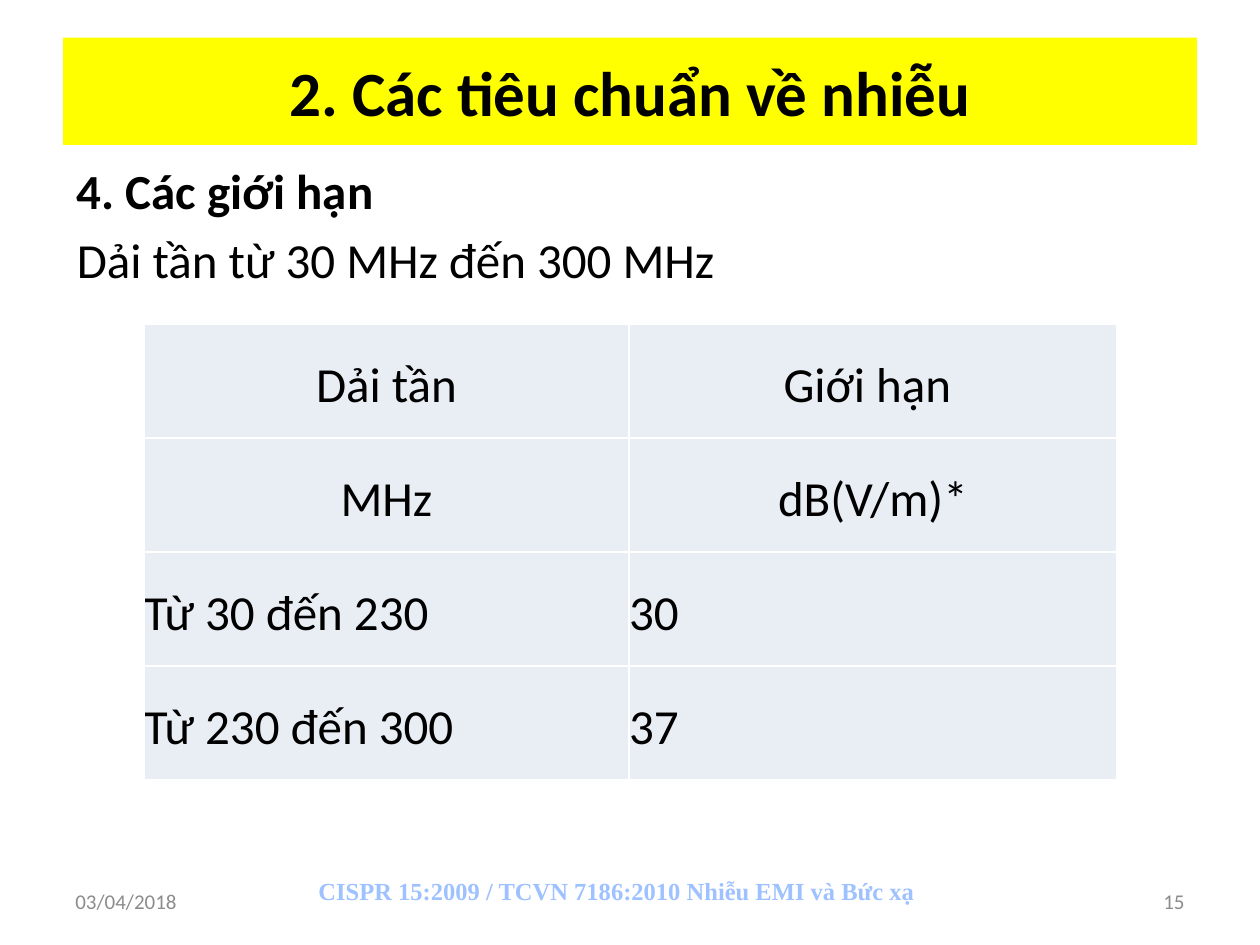
import pptx
import pptx.util
import pptx.dml.color
import pptx.enum.text
from lxml import etree
from pptx.dml.color import RGBColor
from pptx.enum.text import MSO_ANCHOR, PP_ALIGN
from pptx.util import Cm, Pt

BLACK = RGBColor(0x00, 0x00, 0x00)
YELLOW = RGBColor(0xFF, 0xFF, 0x00)
PALE = RGBColor(0xE9, 0xED, 0xF4)
GREY = RGBColor(0x8C, 0x8C, 0x8C)
BLUE = RGBColor(0x9E, 0xC1, 0xFF)
BORDER = "FFFFFF"

TITLE = "2. Các tiêu chuẩn về nhiễu"
BODY = [("4. Các giới hạn", True), ("Dải tần từ 30 MHz đến 300 MHz", False)]
LIMITS = [
    ("Dải tần", "Giới hạn "),
    ("MHz", "dB(V/m)*"),
    ("Từ 30 đến 230", "30"),
    ("Từ 230 đến 300", "37"),
]
HEADER_ROWS = 2
COL_WIDTHS = (9.78, 9.83)
ROW_HEIGHT = 2.3
SOURCE = "CISPR 15:2009 / TCVN 7186:2010 Nhiễu EMI và Bức xạ"
DATE, PAGE = "03/04/2018", "15"


def style(p, size, color=BLACK, bold=False, font="Calibri", align=PP_ALIGN.LEFT):
    p.alignment = align
    for r in p.runs:
        r.font.name = font
        r.font.size = Pt(size)
        r.font.bold = bold
        r.font.color.rgb = color


def add_text(s, box, text, anchor=MSO_ANCHOR.TOP):
    tf = s.shapes.add_textbox(*map(Cm, box)).text_frame
    tf.word_wrap = True
    tf.vertical_anchor = anchor
    tf.text = text
    return tf.paragraphs


def add_borders(cell):
    ns = "http://schemas.openxmlformats.org/drawingml/2006/main"
    tcPr = cell._tc.get_or_add_tcPr()
    for i, side in enumerate(("lnL", "lnR", "lnT", "lnB")):
        ln = etree.Element(f"{{{ns}}}{side}", w=str(Pt(1)))
        fill = etree.SubElement(ln, f"{{{ns}}}solidFill")
        etree.SubElement(fill, f"{{{ns}}}srgbClr", val=BORDER)
        tcPr.insert(i, ln)


def add_limits_table(s):
    table = s.shapes.add_table(
        len(LIMITS), len(COL_WIDTHS), Cm(2.9), Cm(6.53),
        Cm(sum(COL_WIDTHS)), Cm(ROW_HEIGHT * len(LIMITS))).table
    for col, width in zip(table.columns, COL_WIDTHS):
        col.width = Cm(width)
    for i, values in enumerate(LIMITS):
        table.rows[i].height = Cm(ROW_HEIGHT)
        for j, value in enumerate(values):
            cell = table.cell(i, j)
            cell.text = value
            cell.fill.solid()
            cell.fill.fore_color.rgb = PALE
            cell.vertical_anchor = MSO_ANCHOR.MIDDLE
            cell.margin_left = cell.margin_right = 0
            cell.margin_top = cell.margin_bottom = 0
            p = cell.text_frame.paragraphs[0]
            p.line_spacing = 1.15
            p.space_before, p.space_after = Pt(12), Pt(6)
            style(p, 28, align=PP_ALIGN.CENTER if i < HEADER_ROWS else PP_ALIGN.LEFT)
            add_borders(cell)


def main():
    prs = pptx.Presentation()
    prs.slide_width, prs.slide_height = Cm(25.4), Cm(19.05)
    s = prs.slides.add_slide(prs.slide_layouts[5])

    title = s.shapes.title
    title.left, title.top, title.width, title.height = map(Cm, (1.27, 0.76, 22.86, 2.16))
    title.fill.solid()
    title.fill.fore_color.rgb = YELLOW
    title.text_frame.text = TITLE
    title.text_frame.vertical_anchor = MSO_ANCHOR.MIDDLE
    style(title.text_frame.paragraphs[0], 36, bold=True, align=PP_ALIGN.CENTER)

    body = add_text(s, (1.3, 3.12, 22.86, 3.61), "\n".join(text for text, _ in BODY))
    for p, (_, bold) in zip(body, BODY):
        p.space_before = Pt(5.6)
        style(p, 28, bold=bold)

    add_limits_table(s)

    p = add_text(s, (4.9, 17.53, 13.82, 1.12), SOURCE)[0]
    p.space_before = Pt(6)
    p._p.get_or_add_pPr().set("indent", str(Cm(1.27)))
    style(p, 14, BLUE, bold=True, font="Times New Roman")

    for left, text, align in ((1.27, DATE, PP_ALIGN.LEFT), (18.2, PAGE, PP_ALIGN.RIGHT)):
        p = add_text(s, (left, 17.66, 5.93, 1.01), text, MSO_ANCHOR.MIDDLE)[0]
        style(p, 12, GREY, align=align)

    prs.save("out.pptx")


if __name__ == "__main__":
    main()
